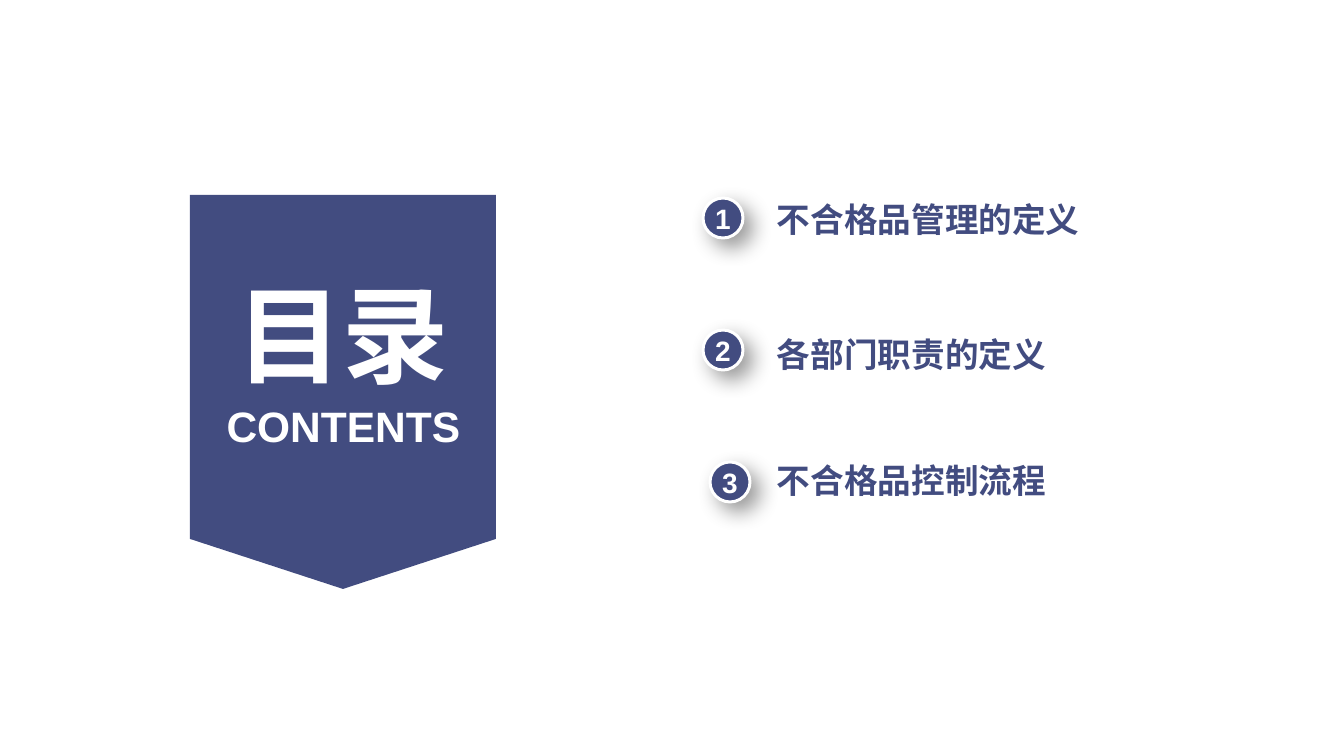
from dataclasses import dataclass

from lxml.etree import SubElement
from pptx import Presentation
from pptx.dml.color import RGBColor
from pptx.enum.shapes import MSO_SHAPE as Preset
from pptx.enum.text import MSO_ANCHOR as Anchor, MSO_AUTO_SIZE as AutoSize, PP_ALIGN as Align
from pptx.oxml.ns import qn
from pptx.shapes.autoshape import Shape
from pptx.slide import Slide
from pptx.util import Emu, Pt

INDIGO = RGBColor(0x42, 0x4C, 0x80)
WHITE = RGBColor(0xFF, 0xFF, 0xFF)
FONT = "Arial"
EMU_PER_PX = 9565

COMPARISON_LAYOUT = 4
RIBBON_OUTLINE = [(190, 195), (496, 195), (496, 539), (343, 589), (190, 539)]
BADGE_TOP, BADGE_PITCH, BADGE_SIZE = 198, 132, 40
LABEL_LEFT, LABEL_HEIGHT = 777, 41


@dataclass(frozen=True)
class Chapter:
    label: str
    badge_left: int
    label_top: int
    label_width: int


CHAPTERS = [
    Chapter("不合格品管理的定义", 703, 199, 366),
    Chapter("各部门职责的定义", 703, 334, 383),
    Chapter("不合格品控制流程", 710, 460, 346),
]


def px(value: int) -> Emu:
    return Emu(value * EMU_PER_PX)


def place(shape: Shape, left: int, top: int, width: int, height: int) -> None:
    shape.left, shape.top = px(left), px(top)
    shape.width, shape.height = px(width), px(height)


def write(shape: Shape, text: str, size: float, color: RGBColor,
          align: Align = Align.CENTER, anchor: Anchor = Anchor.MIDDLE) -> None:
    """Put one bold line without margins, bullet or spacing into the shape."""
    frame = shape.text_frame
    frame.word_wrap = True
    frame.auto_size = AutoSize.NONE
    frame.vertical_anchor = anchor
    frame.margin_left = frame.margin_top = frame.margin_right = frame.margin_bottom = 0
    paragraph = frame.paragraphs[0]
    paragraph.alignment = align
    paragraph.space_before = Pt(0)
    properties = paragraph._p.get_or_add_pPr()
    properties.set("marL", "0")
    properties.set("indent", "0")
    SubElement(properties, qn("a:buNone"))
    run = paragraph.add_run()
    run.text = text
    run.font.name = FONT
    run.font.size = Pt(size)
    run.font.bold = True
    run.font.color.rgb = color


def add_ribbon(slide: Slide) -> None:
    """Draw the pointed ribbon behind the title placeholder."""
    start, *corners = RIBBON_OUTLINE
    builder = slide.shapes.build_freeform(*start, scale=EMU_PER_PX)
    builder.add_line_segments(corners, close=True)
    ribbon = builder.convert_to_shape()
    ribbon.shadow.inherit = False
    ribbon.fill.solid()
    ribbon.fill.fore_color.rgb = INDIGO
    ribbon.line.fill.background()
    slide.shapes._spTree.insert(2, ribbon._element)


def add_drop_shadow(shape: Shape) -> None:
    shape.shadow.inherit = False
    effects = shape._element.spPr.find(qn("a:effectLst"))
    shadow = SubElement(effects, qn("a:outerShdw"), blurRad=str(Pt(16)), dist=str(Pt(9)),
                        dir=str(45 * 60000), algn="tl", rotWithShape="0")
    color = SubElement(shadow, qn("a:srgbClr"), val="000000")
    SubElement(color, qn("a:alpha"), val="40000")


def add_badge(slide: Slide, number: int, left: int) -> None:
    top = BADGE_TOP + (number - 1) * BADGE_PITCH
    badge = slide.shapes.add_shape(Preset.OVAL, px(left), px(top), px(BADGE_SIZE), px(BADGE_SIZE))
    badge.fill.solid()
    badge.fill.fore_color.rgb = INDIGO
    badge.line.color.rgb = WHITE
    badge.line.width = Pt(2.25)
    add_drop_shadow(badge)
    write(badge, str(number), 21.1, WHITE)


def main() -> None:
    presentation = Presentation()
    presentation.slide_width, presentation.slide_height = px(1344), px(756)
    slide = presentation.slides.add_slide(presentation.slide_layouts[COMPARISON_LAYOUT])
    title, *bodies = slide.placeholders

    add_ribbon(slide)
    place(title, 228, 269, 230, 129)
    write(title, "目录", 80, WHITE)
    subtitle = slide.shapes.add_textbox(px(225), px(400), px(237), px(52))
    write(subtitle, "CONTENTS", 32, WHITE, anchor=Anchor.TOP)

    for number, (chapter, body) in enumerate(zip(CHAPTERS, bodies), start=1):
        add_badge(slide, number, chapter.badge_left)
        place(body, LABEL_LEFT, chapter.label_top, chapter.label_width, LABEL_HEIGHT)
        write(body, chapter.label, 25.3, INDIGO, Align.LEFT)
    for unused in bodies[len(CHAPTERS):]:
        unused._element.getparent().remove(unused._element)

    presentation.save("out.pptx")


if __name__ == "__main__":
    main()
